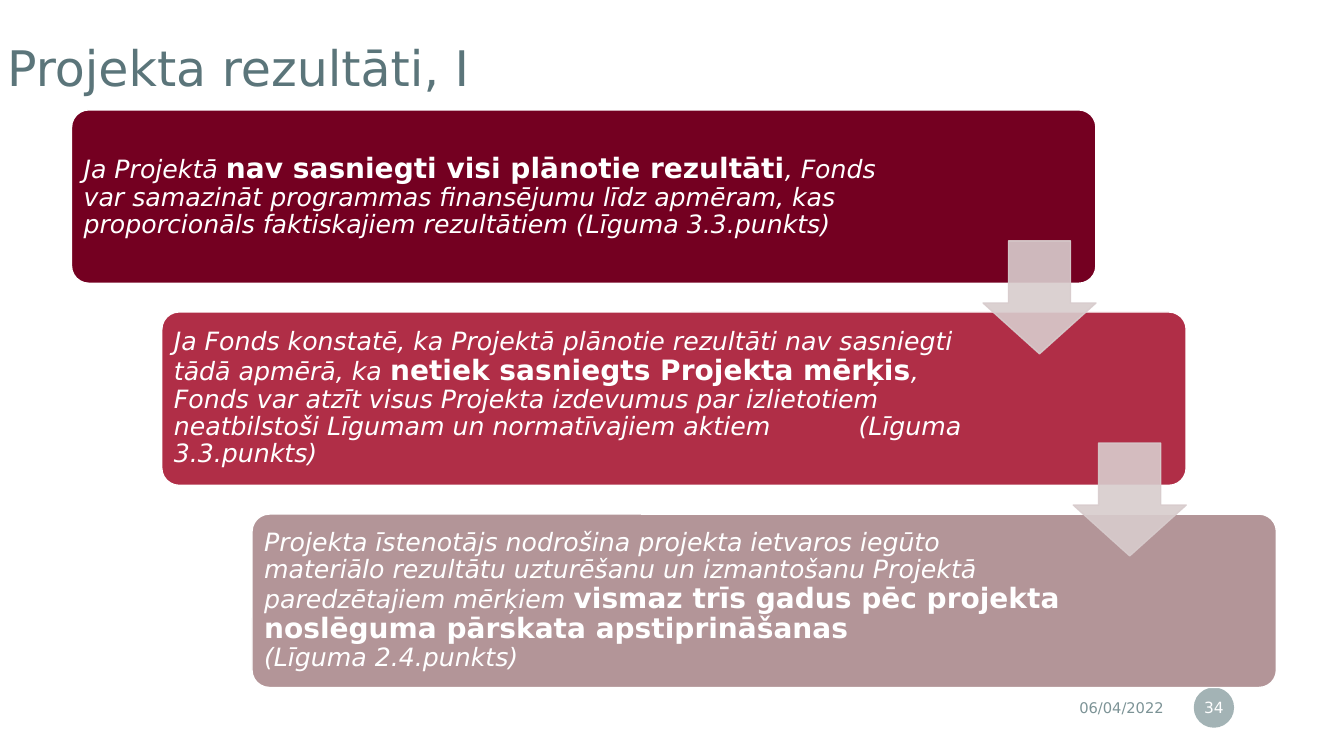
from lxml import etree
from pptx import Presentation
from pptx.dml.color import RGBColor
from pptx.enum.shapes import MSO_SHAPE
from pptx.enum.text import MSO_ANCHOR, PP_ALIGN
from pptx.oxml.ns import qn
from pptx.util import Inches, Pt

ROUND, ARROW, OVAL = MSO_SHAPE.ROUNDED_RECTANGLE, MSO_SHAPE.DOWN_ARROW, MSO_SHAPE.OVAL
TOP, MIDDLE = MSO_ANCHOR.TOP, MSO_ANCHOR.MIDDLE
LEFT, CENTER, RIGHT = PP_ALIGN.LEFT, PP_ALIGN.CENTER, PP_ALIGN.RIGHT

WHITE = RGBColor(0xFF, 0xFF, 0xFF)
SLATE = RGBColor(0x5B, 0x75, 0x7A)
GREY = RGBColor(0x7C, 0x93, 0x96)
WINE = RGBColor(0x74, 0x00, 0x21)
RED = RGBColor(0xB0, 0x2E, 0x47)
ROSE = RGBColor(0xB3, 0x95, 0x98)
PALE = RGBColor(0xD8, 0xCC, 0xCD)
FONT = "DejaVu Sans"

# Content: each card has a fill, a right inset and (text, is key) runs
TITLE = "Projekta rezultāti, I"
DATE = "06/04/2022"
PAGE = "34"
CARDS = [
    (WINE, 1.83, [
        ("Ja Projektā ", False),
        ("nav sasniegti visi plānotie rezultāti", True),
        (", Fonds var samazināt programmas finansējumu līdz apmēram, kas "
         "proporcionāls faktiskajiem rezultātiem (Līguma 3.3.punkts)", False)]),
    (RED, 2.09, [
        ("Ja Fonds konstatē, ka Projektā plānotie rezultāti nav sasniegti "
         "tādā apmērā, ka ", False),
        ("netiek sasniegts Projekta mērķis", True),
        (", Fonds var atzīt visus Projekta izdevumus par izlietotiem neatbilstoši "
         "Līgumam un normatīvajiem aktiem\t(Līguma 3.3.punkts)", False)]),
    (ROSE, 2.09, [
        ("Projekta īstenotājs nodrošina projekta ietvaros iegūto materiālo "
         "rezultātu uzturēšanu un izmantošanu Projektā paredzētajiem mērķiem ", False),
        ("vismaz trīs gadus pēc projekta noslēguma pārskata apstiprināšanas", True),
        ("\n", False),
        ("(Līguma 2.4.punkts)", False)]),
]

# Layout in inches
CARD_X, CARD_Y, CARD_W, CARD_H = 0.71, 1.09, 10.16, 1.72
STEP_X, STEP_Y = 0.895, 2.005
ARROW_DX, ARROW_DY, ARROW_SIZE = 9.04, 1.3, 1.12
TAB_X = 6.79

prs = Presentation()
prs.slide_width, prs.slide_height = Inches(13.33), Inches(7.5)
slide = prs.slides.add_slide(prs.slide_layouts[6])


def add_part(kind, box, fill, line=None, alpha=None):
    part = slide.shapes.add_shape(kind, *map(Inches, box))
    part.shadow.inherit = False
    part.fill.solid()
    part.fill.fore_color.rgb = fill
    if line is None:
        part.line.fill.background()
    else:
        part.line.color.rgb = line
        part.line.width = Pt(1)
    if alpha:
        for color in part.element.spPr.iter(qn("a:srgbClr")):
            etree.SubElement(color, qn("a:alpha")).set("val", str(alpha * 1000))
    return part


def set_frame(part, insets, anchor=MIDDLE, align=LEFT):
    frame = part.text_frame
    frame.word_wrap = True
    frame.vertical_anchor = anchor
    (frame.margin_left, frame.margin_top,
     frame.margin_right, frame.margin_bottom) = map(Inches, insets)
    para = frame.paragraphs[0]
    para.alignment = align
    return para


def add_run(para, text, size, color, bold=False, italic=False):
    run = para.add_run()
    run.text = text
    font = run.font
    font.name, font.size, font.bold, font.italic = FONT, Pt(size), bold, italic
    font.color.rgb = color


def add_label(box, insets, text, size, color, anchor=MIDDLE, align=LEFT):
    label = slide.shapes.add_textbox(*map(Inches, box))
    para = set_frame(label, insets, anchor, align)
    add_run(para, text, size, color)
    return para


# Title and footer
head = add_label((-0.13, 0.35, 11.41, 1.19), (0.2, 0.09, 0.2, 0.2),
                 TITLE, 35, SLATE, TOP)
head.line_spacing = 0.9
add_label((8.63, 6.84, 3.01, 0.35), (0.1, 0.05, 0.1, 0.05),
          DATE, 10.5, GREY, align=RIGHT)
badge = add_part(OVAL, (11.84, 6.82, 0.4, 0.4), GREY, alpha=70)
add_run(set_frame(badge, (0.02, 0.05, 0.02, 0.05), align=CENTER), PAGE, 11, WHITE)

# Staircase of cards
for i, (fill, inset, runs) in enumerate(CARDS):
    box = (CARD_X + i * STEP_X, CARD_Y + i * STEP_Y, CARD_W, CARD_H)
    card = add_part(ROUND, box, fill, WHITE)
    card.adjustments[0] = 0.1
    para = set_frame(card, (0.07, 0.07, inset, 0.07))
    para.line_spacing = 0.9
    if any("\t" in text for text, key in runs):
        tabs = etree.SubElement(para._p.get_or_add_pPr(), qn("a:tabLst"))
        etree.SubElement(tabs, qn("a:tab"), pos=str(Inches(TAB_X)), algn="l")
    for text, key in runs:
        if text == "\n":
            para.add_line_break()
        else:
            add_run(para, text, 20 if key else 18, WHITE, key, not key)

# Arrows from each card to the next
for i in range(len(CARDS) - 1):
    arrow = add_part(ARROW, (CARD_X + ARROW_DX + i * STEP_X,
                             CARD_Y + ARROW_DY + i * STEP_Y,
                             ARROW_SIZE, ARROW_SIZE), PALE, PALE, 90)
    arrow.adjustments[0], arrow.adjustments[1] = 0.55, 0.45

prs.save("out.pptx")
